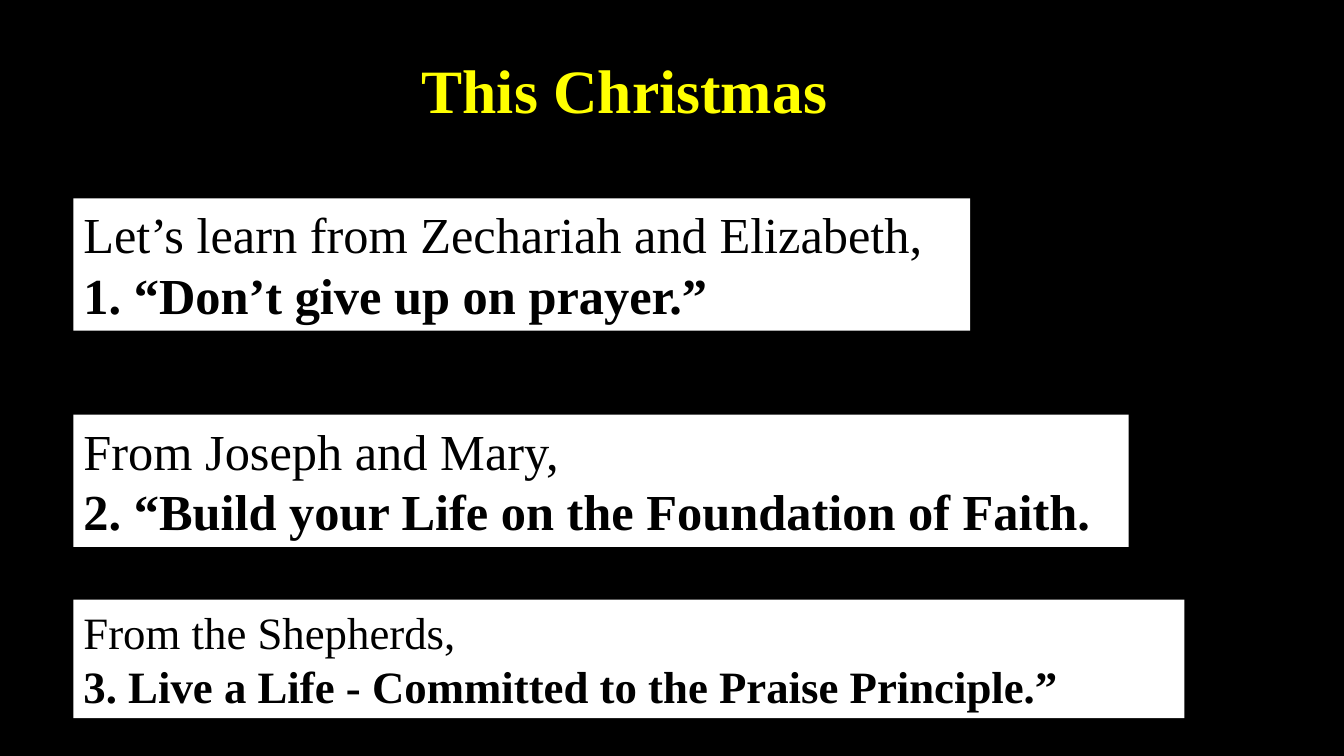
from pptx import Presentation
from pptx import util as u
from pptx.dml.color import RGBColor
from pptx.enum import shapes, text

PX = 9525
FONT = "Times New Roman"
COLORS = {"night": "000000", "title": "FFFF00", "panel": "FFFFFF", "ink": "000000"}
TITLE = "This Christmas"
TITLE_BOX = (42, 45, 1106, 81)
PANEL_LEFT = 70
LESSONS = [
    (189, 854, 126, 36, "Let’s learn from Zechariah and Elizabeth,",
     "1. “Don’t give up on prayer.”"),
    (395, 1005, 126, 36, "From Joseph and Mary,",
     "2. “Build your Life on the Foundation of Faith."),
    (571, 1058, 113, 32, "From the Shepherds,",
     "3. Live a Life - Committed to the Praise Principle.”"),
]


def color(name):
    return RGBColor.from_string(COLORS[name])


def px(*lengths):
    return [u.Emu(n * PX) for n in lengths]


def write(p, line, size, ink, bold, align):
    p.text = line
    p.alignment = align
    for r in p.runs:
        r.font.name = FONT
        r.font.size = u.Pt(size)
        r.font.bold = bold
        r.font.color.rgb = color(ink)


prs = Presentation()
prs.slide_width, prs.slide_height = px(1280, 720)
s = prs.slides.add_slide(prs.slide_layouts[5])
s.background.fill.solid()
s.background.fill.fore_color.rgb = color("night")

title = s.shapes.title
title.left, title.top, title.width, title.height = px(*TITLE_BOX)
tf = title.text_frame
tf.vertical_anchor = text.MSO_ANCHOR.TOP
write(tf.paragraphs[0], TITLE, 44, "title", True, text.PP_ALIGN.CENTER)

for top, width, height, size, source, lesson in LESSONS:
    sp = s.shapes.add_shape(shapes.MSO_SHAPE.RECTANGLE, *px(PANEL_LEFT, top, width, height))
    sp.shadow.inherit = False
    sp.fill.solid()
    sp.fill.fore_color.rgb = color("panel")
    sp.line.fill.background()
    tf = sp.text_frame
    tf.word_wrap = True
    tf.vertical_anchor = text.MSO_ANCHOR.TOP
    write(tf.paragraphs[0], source, size, "ink", False, text.PP_ALIGN.LEFT)
    write(tf.add_paragraph(), lesson, size, "ink", True, text.PP_ALIGN.LEFT)

prs.save("out.pptx")
